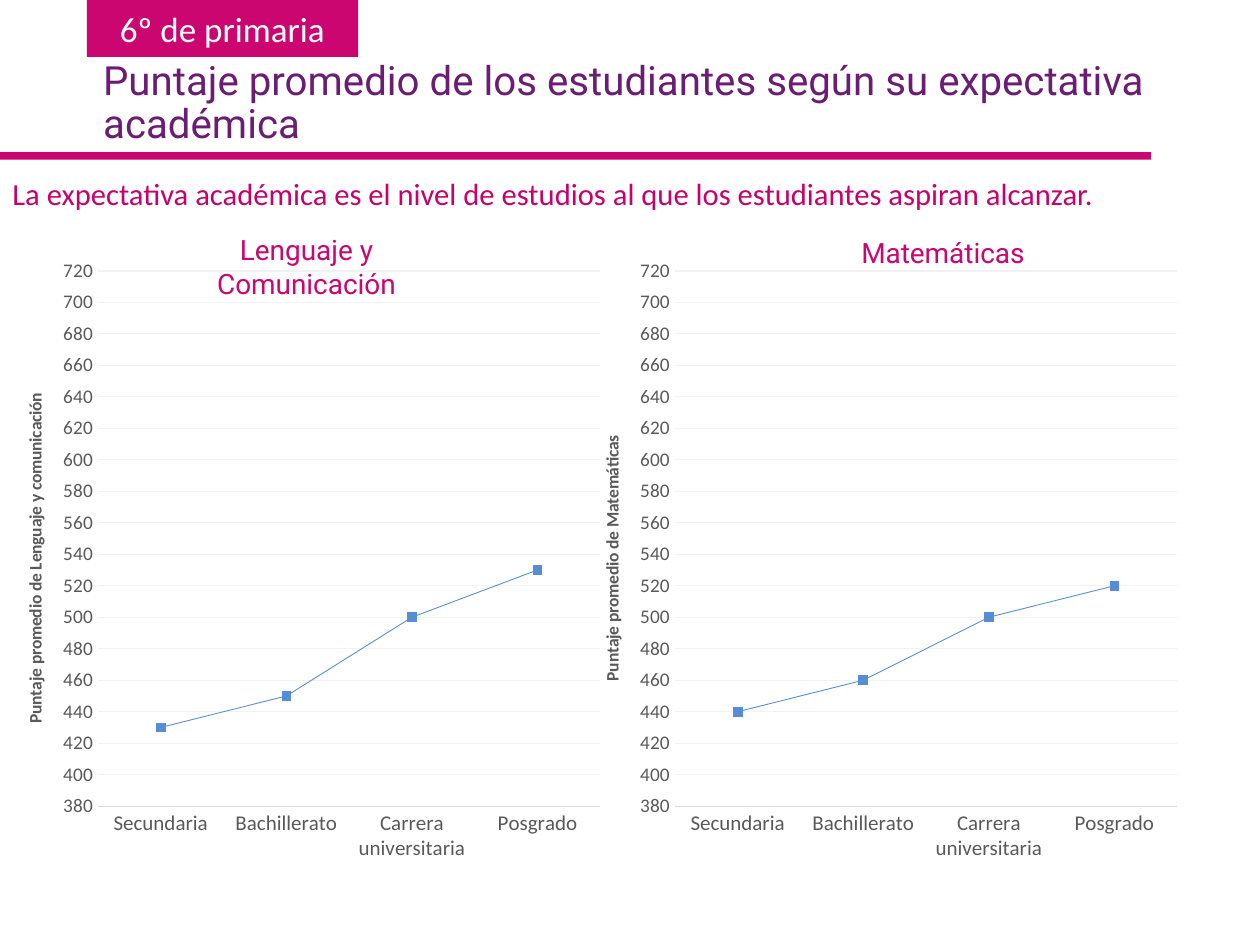
from dataclasses import dataclass

import pptx
import pptx.chart.data
import pptx.dml.color
import pptx.enum.chart
import pptx.enum.shapes
import pptx.enum.text
import pptx.oxml
import pptx.util
from pptx.util import Cm

MAGENTA, PURPLE, WHITE = "CC0671", "6B1C73", "FFFFFF"
BLUE, GREY, AXIS_GREY, GRID_GREY = "558ED5", "595959", "D9D9D9", "F2F2F2"
CATEGORIES = ("Secundaria", "Bachillerato", "Carrera universitaria", "Posgrado")
PLOT_AREA = {"x": 0.16, "y": 0.02, "w": 0.82, "h": 0.87}
CENTER = pptx.enum.text.PP_ALIGN.CENTER


@dataclass(frozen=True)
class Box:
    left: float
    top: float
    width: float
    height: float

    def lengths(self) -> tuple:
        return tuple(Cm(v) for v in (self.left, self.top, self.width, self.height))


@dataclass(frozen=True)
class ScorePanel:
    heading: str
    heading_box: Box
    axis_title: str
    scores: tuple
    chart_box: Box


PANELS = (
    ScorePanel("Lenguaje y Comunicación", Box(2.74, 4.57, 6.88, 1.09),
               "Puntaje promedio de Lenguaje y comunicación",
               (430, 450, 500, 530), Box(0, 4.89, 12.35, 12.77)),
    ScorePanel("Matemáticas", Box(15.57, 4.62, 6.88, 1.09),
               "Puntaje promedio de Matemáticas",
               (440, 460, 500, 520), Box(11.63, 4.89, 12.35, 12.77)),
)


def color(value: str) -> pptx.dml.color.RGBColor:
    return pptx.dml.color.RGBColor.from_string(value)


def format_font(font, size: float, fill: str, name: str = "Calibri", bold: bool = False) -> None:
    font.size, font.name, font.bold = pptx.util.Pt(size), name, bold
    font.color.rgb = color(fill)


def format_line(line, fill: str, width: float) -> None:
    line.color.rgb = color(fill)
    line.width = pptx.util.Pt(width)


def write_text(frame, text: str, *, size: float, fill: str, font: str = "Calibri",
               align=None, line_spacing=None, space_before=None,
               anchor=pptx.enum.text.MSO_ANCHOR.TOP) -> None:
    frame.word_wrap = True
    frame.vertical_anchor = anchor
    paragraph = frame.paragraphs[0]
    paragraph.alignment = align
    paragraph.line_spacing = line_spacing
    if space_before is not None:
        paragraph.space_before = pptx.util.Pt(space_before)
    run = paragraph.add_run()
    run.text = text
    format_font(run.font, size, fill, font)


def add_text(slide, box: Box, text: str, **text_format) -> None:
    write_text(slide.shapes.add_textbox(*box.lengths()).text_frame, text, **text_format)


def add_bar(slide, box: Box):
    shape = slide.shapes.add_shape(pptx.enum.shapes.MSO_SHAPE.RECTANGLE, *box.lengths())
    shape.shadow.inherit = False
    shape.fill.solid()
    shape.fill.fore_color.rgb = color(MAGENTA)
    shape.line.fill.background()
    return shape


def set_plot_layout(chart) -> None:
    plot_area = chart._chartSpace.chart.plotArea
    for layout in plot_area.findall(pptx.oxml.ns.qn("c:layout")):
        plot_area.remove(layout)
    modes = '<c:layoutTarget val="inner"/><c:xMode val="edge"/><c:yMode val="edge"/>'
    sizes = "".join(f'<c:{key} val="{value}"/>' for key, value in PLOT_AREA.items())
    plot_area.insert(0, pptx.oxml.parse_xml(
        f'<c:layout {pptx.oxml.ns.nsdecls("c")}><c:manualLayout>'
        f"{modes}{sizes}</c:manualLayout></c:layout>"))


def format_axes(chart, title: str) -> None:
    for axis, size in ((chart.category_axis, 12), (chart.value_axis, 11)):
        axis.major_tick_mark = axis.minor_tick_mark = pptx.enum.chart.XL_TICK_MARK.NONE
        format_font(axis.tick_labels.font, size, GREY)
    format_line(chart.category_axis.format.line, AXIS_GREY, 0.75)
    scale = chart.value_axis
    scale.minimum_scale, scale.maximum_scale, scale.major_unit = 380, 730, 20
    scale.format.line.fill.background()
    format_line(scale.major_gridlines.format.line, GRID_GREY, 0.75)
    run = scale.axis_title.text_frame.paragraphs[0].add_run()
    run.text = title
    format_font(run.font, 10, GREY, bold=True)


def add_score_chart(slide, panel: ScorePanel) -> None:
    data = pptx.chart.data.CategoryChartData()
    data.categories = CATEGORIES
    data.add_series("Puntaje promedio", panel.scores)
    chart = slide.shapes.add_chart(pptx.enum.chart.XL_CHART_TYPE.LINE_MARKERS,
                                   *panel.chart_box.lengths(), data).chart
    chart.has_legend = chart.has_title = False
    format_font(chart.font, 10, "000000")
    chart.plots[0].vary_by_categories = False
    series = chart.plots[0].series[0]
    series.smooth = False
    format_line(series.format.line, BLUE, 0.5)
    series.marker.style = pptx.enum.chart.XL_MARKER_STYLE.SQUARE
    series.marker.size = 5
    series.marker.format.fill.solid()
    series.marker.format.fill.fore_color.rgb = color(BLUE)
    format_line(series.marker.format.line, BLUE, 0.75)
    format_axes(chart, panel.axis_title)
    set_plot_layout(chart)


def main() -> None:
    """Build the slide on sixth-grade scores by academic expectation."""
    presentation = pptx.Presentation()
    presentation.slide_width, presentation.slide_height = Cm(25.4), Cm(19.05)
    slide = presentation.slides.add_slide(presentation.slide_layouts[6])
    grade_tag = add_bar(slide, Box(1.75, 0, 5.47, 1.15))
    write_text(grade_tag.text_frame, "6º de primaria", size=20, fill=WHITE, align=CENTER,
               anchor=pptx.enum.text.MSO_ANCHOR.MIDDLE)
    add_text(slide, Box(1.83, 1.1, 21.89, 2.34),
             "Puntaje promedio de los estudiantes según su expectativa académica",
             size=23, fill=PURPLE, font="Roboto", line_spacing=0.9)
    add_bar(slide, Box(0, 3.07, 23.2, 0.15))
    for panel in PANELS:
        add_text(slide, panel.heading_box, panel.heading, size=16, fill=MAGENTA,
                 font="Roboto", align=CENTER, space_before=10)
    add_text(slide, Box(0, 3.4, 25.4, 1.02),
             "La expectativa académica es el nivel de estudios al que los estudiantes "
             "aspiran alcanzar.", size=17.5, fill="C80069")
    for panel in PANELS:
        add_score_chart(slide, panel)
    presentation.save("out.pptx")


if __name__ == "__main__":
    main()
